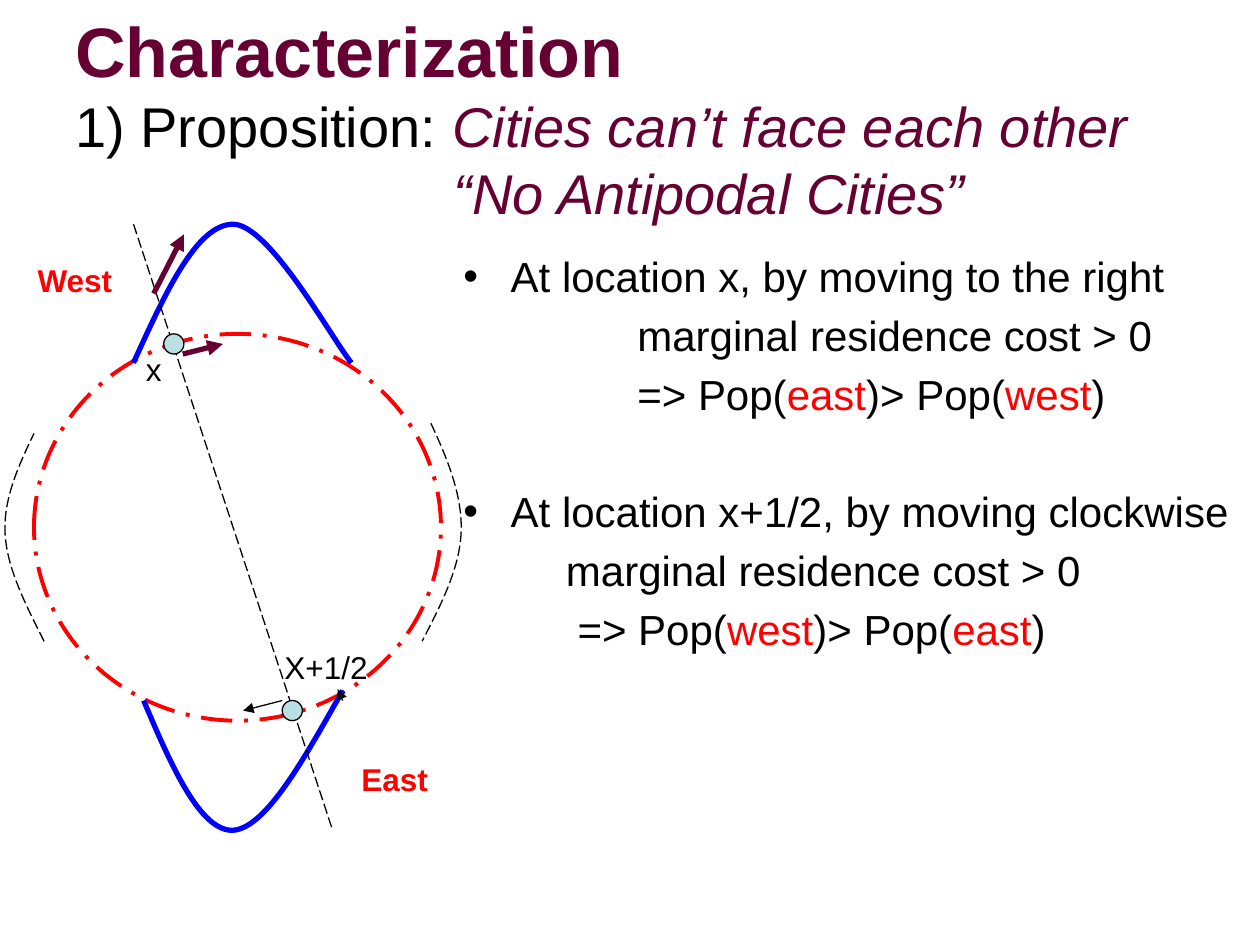
import pptx
import pptx.dml.color
import pptx.enum.dml
import pptx.enum.shapes
import pptx.enum.text
import pptx.oxml
import pptx.oxml.ns
import pptx.util

rgb = pptx.dml.color.RGBColor.from_string
qn = pptx.oxml.ns.qn
Dash = pptx.enum.dml.MSO_LINE
Pt = pptx.util.Pt
BLACK, RED, BLUE, PLUM, PALE = "000000", "FF0000", "0000FF", "660033", "BBE0E3"

deck = pptx.Presentation()
deck.slide_width, deck.slide_height = pptx.util.Inches(10), pptx.util.Inches(7.5)
slide = deck.slides.add_slide(deck.slide_layouts[6])
shapes = slide.shapes
UNIT = deck.slide_width // 100  # grid of 100 columns by 75 rows


def stroke(line, color, width, dash=None):
    line.color.rgb = rgb(color)
    line.width = Pt(width)
    if dash is not None:
        line.dash_style = dash


def write(paragraph, pieces, size):
    """Add (text, colour, bold, italic) pieces as runs; a newline is a line break."""
    for text, color, bold, italic in pieces:
        for number, part in enumerate(text.split("\n")):
            if number:
                paragraph.add_line_break()
            run = paragraph.add_run()
            run.text = part
            run.font.name, run.font.size = "Arial", Pt(size)
            run.font.bold, run.font.italic = bold, italic
            run.font.color.rgb = rgb(color)


# Title, with the proposition below it
title = shapes.add_textbox(5 * UNIT, 3 * UNIT, 90 * UNIT, int(12.5 * UNIT)).text_frame
title.word_wrap = True
title.vertical_anchor = pptx.enum.text.MSO_ANCHOR.MIDDLE
heading = title.paragraphs[0]
write(heading, [("Characterization", PLUM, True, False)], 40)
heading.add_line_break()
write(heading, [
    ("1) Proposition: ", BLACK, False, False),
    ("Cities can’t face each other\n\t\t\t“No Antipodal Cities”", PLUM, False, True),
], 32)
heading_format = heading._p.get_or_add_pPr()
tabs = heading_format.makeelement(qn("a:tabLst"), {})
heading_format.append(tabs)
for column in (10, 20, 30):
    tabs.append(tabs.makeelement(qn("a:tab"), {"pos": str(column * UNIT), "algn": "l"}))

# Argument: bullet, left margin, space before, words
argument = shapes.add_textbox(
    int(35.8 * UNIT), int(19.4 * UNIT), int(63.8 * UNIT), int(47.6 * UNIT)).text_frame
argument.word_wrap = True
steps = [
    (True, 3.75, 0, ["At location x, by moving to the right"]),
    (False, 13.8, 4.8, ["marginal residence cost > 0"]),
    (False, 13.8, 4.8, ["=> Pop(", "east", ")> Pop(", "west", ")"]),
    (True, 3.75, 38.4, ["At location x+1/2, by moving clockwise"]),
    (False, 8.13, 4.8, ["marginal residence cost > 0"]),
    (False, 8.13, 4.8, [" => Pop(", "west", ")> Pop(", "east", ")"]),
]
for number, (bulleted, margin, before, words) in enumerate(steps):
    step = argument.add_paragraph() if number else argument.paragraphs[0]
    write(step, [(word, RED if word in ("east", "west") else BLACK, False, False)
                 for word in words], 24)
    step.space_before = Pt(before)
    step_format = step._p.get_or_add_pPr()
    step_format.set("marL", str(int(margin * UNIT)))
    step_format.set("indent", str(-int(margin * UNIT) if bulleted else 0))
    if bulleted:
        for tag, values in (("a:buFont", {"typeface": "Arial"}), ("a:buChar", {"char": "•"})):
            step_format.append(step_format.makeelement(qn(tag), values))

# Circular city
ring = shapes.add_shape(pptx.enum.shapes.MSO_SHAPE.OVAL, int(2.7 * UNIT),
                        int(26.5 * UNIT), int(32.3 * UNIT), int(30.7 * UNIT))
ring.shadow.inherit = False
ring.fill.solid()
ring.fill.fore_color.rgb = rgb("FFFFFF")
stroke(ring.line, RED, 2.25, Dash.LONG_DASH_DOT)

# Population humps (blue) and side arcs (dashed), each two Bézier segments
curves = [
    (BLUE, 3, None, [(10.6, 28.8), (13.1, 23.3), (15.6, 17.8), (18.5, 17.8),
                     (21.4, 17.8), (26.4, 27), (27.9, 28.8)]),
    (BLUE, 3, None, [(11.4, 55.6), (13.6, 60.8), (15.9, 66), (18.5, 65.9),
                     (21.1, 65.7), (24.1, 60.3), (27.2, 54.8)]),
    (BLACK, 0.75, Dash.LONG_DASH, [(3.5, 50.9), (2, 47.9), (0.5, 45), (0.4, 42.2),
                                   (0.3, 39.5), (1.5, 36.9), (2.7, 34.4)]),
    (BLACK, 0.75, Dash.LONG_DASH, [(34.2, 33.6), (35.5, 36.4), (36.7, 39.3), (36.6, 42.2),
                                   (36.5, 45.1), (35, 48), (33.5, 50.9)]),
]
for color, width, dash, controls in curves:
    points = [(int(x * UNIT), int(y * UNIT)) for x, y in controls]
    builder = shapes.build_freeform(*points[0])
    builder.add_line_segments(points[1:], close=False)
    curve = builder.convert_to_shape()
    # Every three straight segments become one cubic segment
    segments = list(curve._element.iter(qn("a:lnTo")))
    for first in range(0, len(segments), 3):
        outline = segments[first].getparent()
        cubic = outline.makeelement(qn("a:cubicBezTo"), {})
        outline.append(cubic)
        for segment in segments[first:first + 3]:
            cubic.append(segment[0])
            outline.remove(segment)
    curve.shadow.inherit = False
    curve.fill.background()
    stroke(curve.line, color, width, dash)

# Antipodal axis and direction arrows
lines = [
    ((10.6, 17.8), (26.4, 65.9), BLACK, 0.75, Dash.LONG_DASH, False),
    ((14.5, 28.1), (17.7, 27.3), PLUM, 3, None, True),
    ((27.2, 55.6), (26.8, 54.7), BLACK, 0.75, None, True),
    ((22.4, 55.6), (19.3, 56.4), BLACK, 0.75, None, True),
    ((12.2, 23.3), (14.6, 18.6), PLUM, 3, None, True),
]
for start, end, color, width, dash, arrow in lines:
    link = shapes.add_connector(pptx.enum.shapes.MSO_CONNECTOR.STRAIGHT,
                                *(int(value * UNIT) for value in start + end))
    stroke(link.line, color, width, dash)
    if arrow:
        outline = link.line._get_or_add_ln()
        outline.append(outline.makeelement(qn("a:tailEnd"), {"type": "triangle"}))
    frame = link._element.spPr
    frame.append(frame.makeelement(qn("a:effectLst"), {}))

# Labels
labels = [
    ("x", 10.6, 27.3, 3.3, BLACK, False),
    ("X+1/2", 21.6, 50.9, 8.6, BLACK, False),
    ("East", 27.7, 59.8, 7.3, RED, True),
    ("West", 2, 20.2, 8, RED, True),
]
for text, left, top, width, color, bold in labels:
    label = shapes.add_textbox(int(left * UNIT), int(top * UNIT),
                               int(width * UNIT), 4 * UNIT).text_frame
    label.word_wrap = False
    label.auto_size = pptx.enum.text.MSO_AUTO_SIZE.SHAPE_TO_FIT_TEXT
    write(label.paragraphs[0], [(text, color, bold, False)], 18)

# The two antipodal locations
for left, top in ((13, 26.5), (22.4, 55.6)):
    location = shapes.add_shape(pptx.enum.shapes.MSO_SHAPE.OVAL, int(left * UNIT),
                                int(top * UNIT), int(1.6 * UNIT), int(1.6 * UNIT))
    location.shadow.inherit = False
    location.fill.solid()
    location.fill.fore_color.rgb = rgb(PALE)
    stroke(location.line, BLACK, 0.75)

deck.save("out.pptx")
